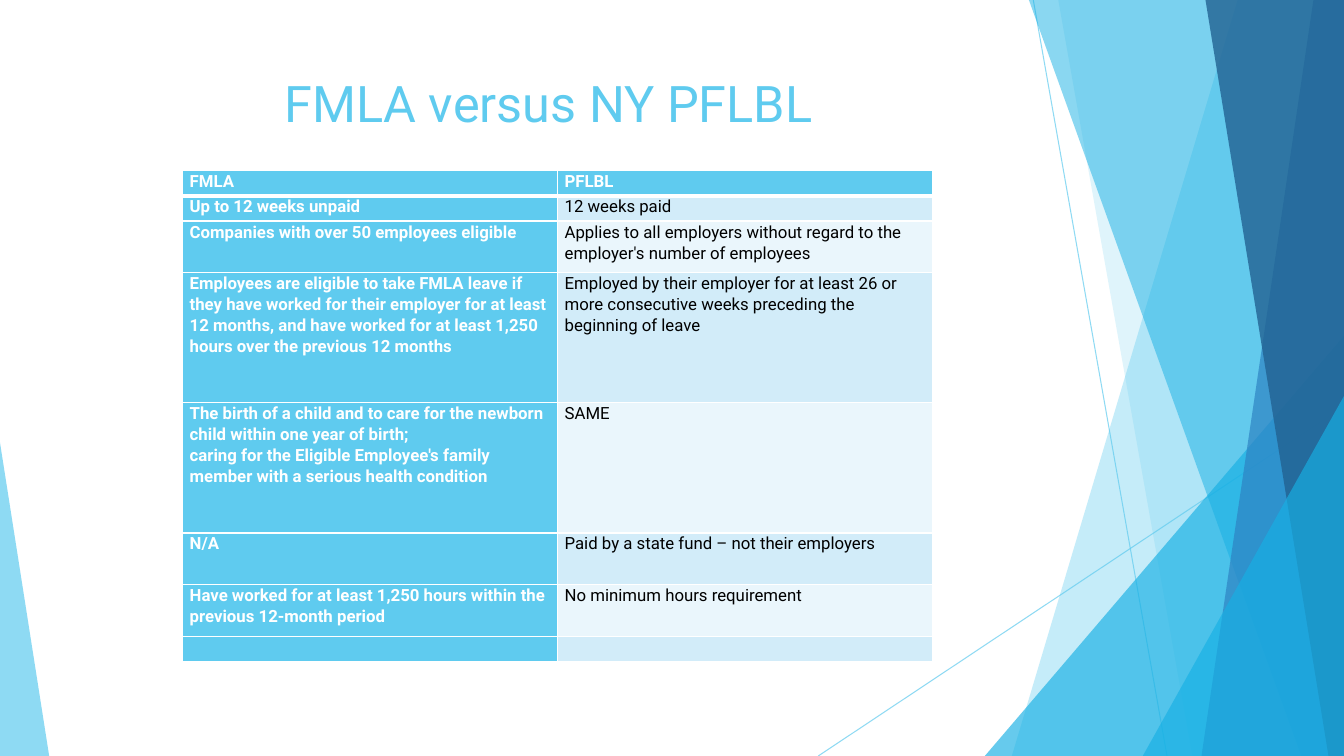
from dataclasses import dataclass

import lxml.etree
import pptx
import pptx.dml.color
import pptx.enum.shapes
import pptx.enum.text
import pptx.oxml.ns
import pptx.util

Cm = pptx.util.Cm
Pt = pptx.util.Pt
qn = pptx.oxml.ns.qn


@dataclass(frozen=True)
class Theme:
    font: str = "Roboto"
    title_size: int = 36
    table_size: int = 12
    sky: str = "5FCBEF"
    cyan: str = "17B0E4"
    blue: str = "2E83C3"
    navy: str = "226292"
    white: str = "FFFFFF"
    black: str = "000000"
    bands: tuple = ("D2ECF9", "EAF6FC")


@dataclass(frozen=True)
class Box:
    left: float
    top: float
    width: float
    height: float

    @property
    def lengths(self):
        return Cm(self.left), Cm(self.top), Cm(self.width), Cm(self.height)


THEME = Theme()
PAGE = Box(0, 0, 33.87, 19.05)

# Each row holds two cells; each cell is a list of paragraphs
ROW_HEIGHTS = [0.64, 0.64, 1.3, 3.28, 3.28, 1.3, 1.3, 0.64]
COMPARISON = [
    (["FMLA"], ["PFLBL"]),
    (["Up to 12 weeks unpaid"], ["12 weeks paid"]),
    (["Companies with over 50 employees eligible"],
     ["Applies to all employers without regard to the employer's number of employees"]),
    (["Employees are eligible to take FMLA leave if they have worked for their employer "
      "for at least 12 months, and have worked for at least 1,250 hours over the "
      "previous 12 months"],
     ["Employed by their employer for at least 26 or more consecutive weeks preceding "
      "the beginning of leave"]),
    (["The birth of a child and to care for the newborn child within one year of birth;",
      "caring for the Eligible Employee's family member with a serious health condition"],
     ["SAME"]),
    (["N/A"], ["Paid by a state fund – not their employers"]),
    (["Have worked for at least 1,250 hours within the previous 12-month period"],
     ["No minimum hours requirement"]),
    ([], []),
]


def rgb(color):
    return pptx.dml.color.RGBColor.from_string(color)


def set_alpha(fill_element, percent):
    color = fill_element.find(".//" + qn("a:srgbClr"))
    lxml.etree.SubElement(color, qn("a:alpha"), val=str(percent * 1000))


def paint(facet, color, percent):
    facet.shadow.inherit = False
    facet.fill.solid()
    facet.fill.fore_color.rgb = rgb(color)
    set_alpha(facet.element.spPr.find(qn("a:solidFill")), percent)
    facet.line.fill.background()


def add_run(paragraph, text, size, color, bold=False):
    run = paragraph.add_run()
    run.text = text
    run.font.name = THEME.font
    run.font.size = Pt(size)
    run.font.bold = bold
    run.font.color.rgb = rgb(color)


def add_ray(slide, box, start, end):
    ray = slide.shapes.add_connector(
        pptx.enum.shapes.MSO_CONNECTOR.STRAIGHT,
        Cm(box.left + start[0]), Cm(box.top + start[1]),
        Cm(box.left + end[0]), Cm(box.top + end[1]))
    ray.line.width = Pt(0.75)
    ray.line.color.rgb = rgb(THEME.sky)
    set_alpha(ray.line._ln, 70)
    lxml.etree.SubElement(ray.element.spPr, qn("a:effectLst"))


def add_band(slide, box, top_x, bottom_x, color, percent):
    """Slanted facet that reaches from its left edge to the right of the box."""
    right, bottom = box.left + box.width, box.top + box.height
    outline = slide.shapes.build_freeform(Cm(box.left + top_x), Cm(box.top), scale=1.0)
    outline.add_line_segments([
        (Cm(right), Cm(box.top)), (Cm(right), Cm(bottom)),
        (Cm(box.left + bottom_x), Cm(bottom))], close=True)
    paint(outline.convert_to_shape(), color, percent)


def add_corner(slide, box, apex, color, percent):
    corner = slide.shapes.add_shape(
        pptx.enum.shapes.MSO_SHAPE.ISOSCELES_TRIANGLE, *box.lengths)
    corner.adjustments[0] = apex
    paint(corner, color, percent)


def add_right_facets(slide, box):
    def right_corner(x, y):
        corner = Box(box.left + x, box.top + y, box.width - x, box.height - y)
        add_corner(slide, corner, 1, THEME.cyan, 66)

    add_ray(slide, box, (5.42, 0), (8.79, box.height))
    add_ray(slide, box, (box.width, 10.24), (0, box.height))
    add_band(slide, box, 10.57, 4.88, THEME.sky, 36)
    add_band(slide, box, 6.05, 9.43, THEME.sky, 20)
    right_corner(4.2, 8.46)
    for band in [(5.31, 12.17, THEME.cyan, 50),
                 (12.48, 9.66, THEME.blue, 70),
                 (9.76, 12.86, THEME.navy, 80)]:
        add_band(slide, box, *band)
    right_corner(8.18, 9.98)


def add_title(slide, box):
    title = slide.shapes.title
    title.left, title.top, title.width, title.height = box.lengths
    title.element.getparent().append(title.element)  # in front of the facets
    frame = title.text_frame
    frame.word_wrap = True
    frame.auto_size = pptx.enum.text.MSO_AUTO_SIZE.NONE
    frame.vertical_anchor = pptx.enum.text.MSO_ANCHOR.TOP
    heading = frame.paragraphs[0]
    heading.alignment = pptx.enum.text.PP_ALIGN.CENTER
    add_run(heading, "FMLA versus NY PFLBL", THEME.title_size, THEME.sky)


def set_borders(cell, widths):
    properties = cell._tc.get_or_add_tcPr()
    for side, width in zip("LRTB", widths):
        border = lxml.etree.SubElement(
            properties, qn("a:ln" + side), w=str(Pt(width)))
        fill = lxml.etree.SubElement(border, qn("a:solidFill"))
        lxml.etree.SubElement(fill, qn("a:srgbClr"), val=THEME.white)


def fill_cell(cell, lines, fill, color, bold, borders):
    set_borders(cell, borders)
    cell.fill.solid()
    cell.fill.fore_color.rgb = rgb(fill)
    cell.margin_left = cell.margin_right = Cm(0.18)
    cell.margin_top = cell.margin_bottom = 0
    frame = cell.text_frame
    for number, line in enumerate(lines):
        paragraph = frame.add_paragraph() if number else frame.paragraphs[0]
        paragraph.line_spacing = 1.07
        add_run(paragraph, line, THEME.table_size, color, bold)
    if not lines:  # keeps the empty row low
        lxml.etree.SubElement(frame.paragraphs[0]._p, qn("a:endParaRPr"),
                              sz=str(THEME.table_size * 100))


def add_comparison(slide, box):
    table = slide.shapes.add_table(len(COMPARISON), 2, *box.lengths).table
    table.horz_banding = False
    table.first_col = True
    for column in table.columns:
        column.width = Cm(box.width / 2)
    for r, (cells, height) in enumerate(zip(COMPARISON, ROW_HEIGHTS)):
        table.rows[r].height = Cm(height)
        borders = (1, 1, 3 if r == 1 else 1, 3 if r == 0 else 1)
        for c, lines in enumerate(cells):
            accent = r == 0 or c == 0
            fill = THEME.sky if accent else THEME.bands[(r - 1) % 2]
            color = THEME.white if accent else THEME.black
            fill_cell(table.cell(r, c), lines, fill, color, accent, borders)


def main():
    deck = pptx.Presentation()
    deck.slide_width, deck.slide_height = Cm(PAGE.width), Cm(PAGE.height)
    slide = deck.slides.add_slide(deck.slide_layouts.get_by_name("Title Only"))

    # Background facets
    add_right_facets(slide, Box(20.62, 0, 13.25, PAGE.height))
    add_corner(slide, Box(0, 11.15, 1.24, 7.9), 0, THEME.sky, 70)

    # Title and table
    add_title(slide, Box(1.88, 1.7, 23.88, 3.66))
    add_comparison(slide, Box(4.6, 4.29, 18.9, sum(ROW_HEIGHTS)))
    deck.save("out.pptx")


if __name__ == "__main__":
    main()
